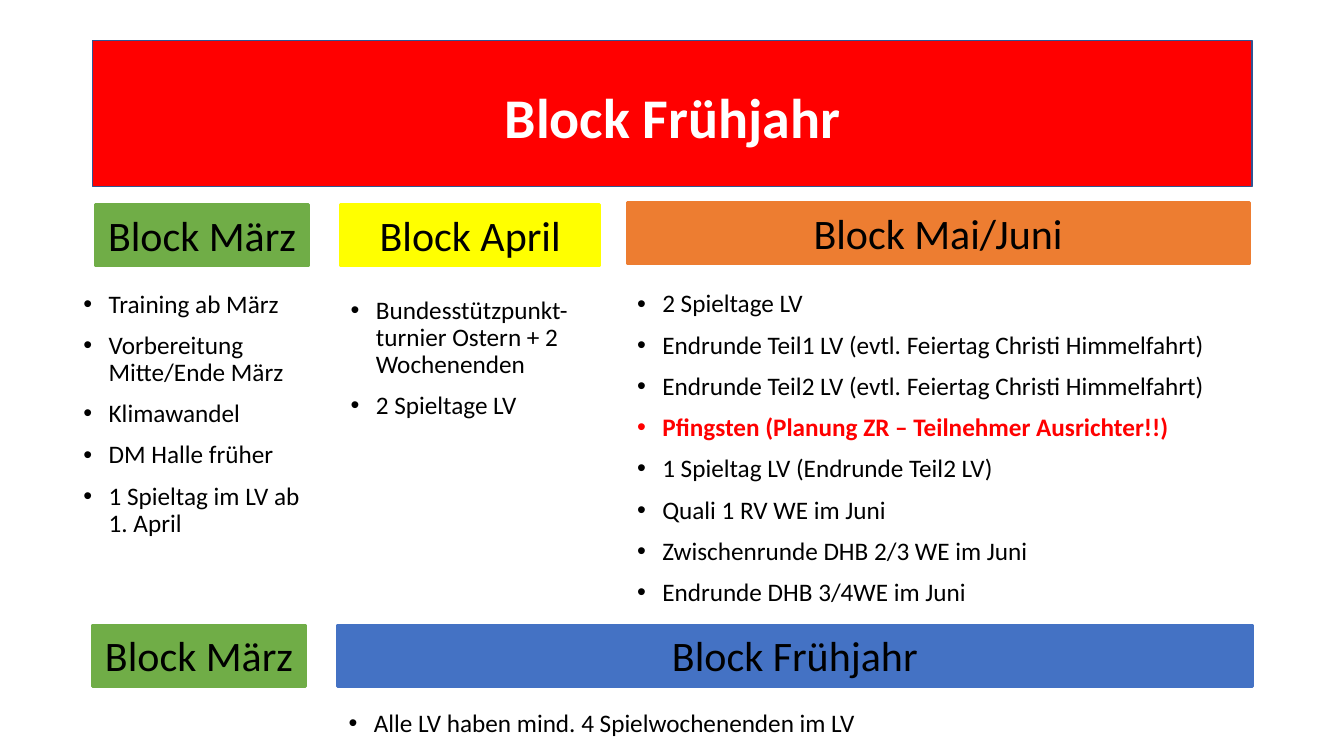
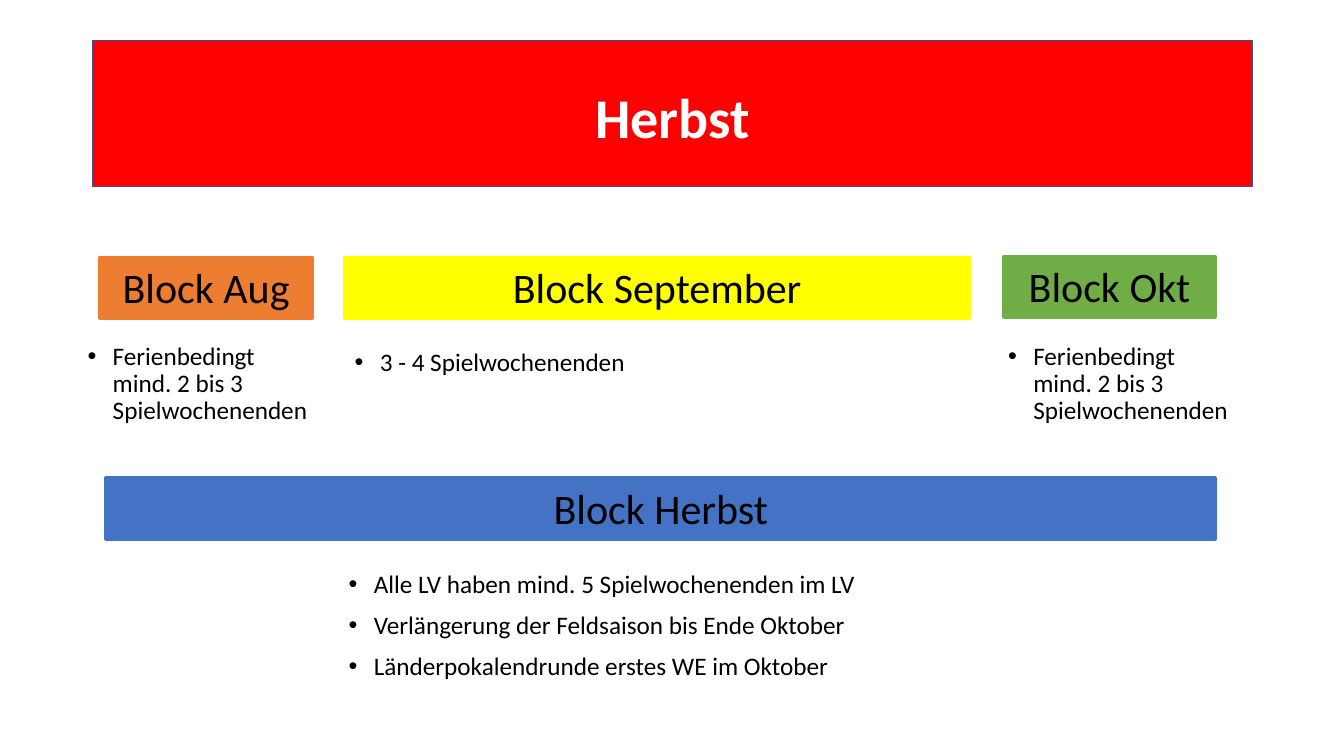
from lxml.etree import SubElement
from pptx import Presentation
from pptx.dml.color import RGBColor
from pptx.enum.shapes import MSO_SHAPE
from pptx.enum.text import MSO_ANCHOR, MSO_AUTO_SIZE, PP_ALIGN
from pptx.oxml.ns import qn
from pptx.util import Inches, Pt

HUES = {
    "red": "FF0000", "navy": "325491", "white": "FFFFFF", "black": "000000",
    "green": "70AD47", "yellow": "FFFF00", "orange": "ED7D31", "blue": "4472C4",
}
FONT = "Calibri"
TITLE = (0.92, 0.4, 11.5, 1.45)
BAR = 0.61
SLIM = 2.11
HOT = "Pfingsten (Planung ZR – Teilnehmer Ausrichter!!)"
BREAK = ["Ferienbedingt mind. 2 bis 3 Spielwochenenden"]

SLIDES = [
    {
        "title": "Block Frühjahr",
        "bars": [
            ("Block März", "green", 0.95, 2.03, SLIM),
            ("Block April", "yellow", 3.38, 2.03, 2.57),
            ("Block Mai/Juni", "orange", 6.22, 2.01, 6.17),
            ("Block März", "green", 0.92, 6.2, SLIM),
            ("Block Frühjahr", "blue", 3.35, 6.2, 9.07),
        ],
        "lists": [
            ((0.73, 2.84, 2.44, 2.65), [
                "Training ab März",
                "Vorbereitung Mitte/Ende März",
                "Klimawandel",
                "DM Halle früher",
                "1 Spieltag im LV ab 1. April",
            ]),
            ((3.38, 2.9, 2.57, 1.66), [
                "Bundesstützpunkt-turnier Ostern + 2 Wochenenden",
                "2 Spieltage LV",
            ]),
            ((6.22, 2.84, 6.08, 3.24), [
                "2 Spieltage LV",
                "Endrunde Teil1 LV (evtl. Feiertag Christi Himmelfahrt)",
                "Endrunde Teil2 LV (evtl. Feiertag Christi Himmelfahrt)",
                HOT,
                "1 Spieltag LV (Endrunde Teil2 LV)",
                "Quali 1 RV WE im Juni",
                "Zwischenrunde DHB 2/3 WE im Juni",
                "Endrunde DHB 3/4WE im Juni",
            ]),
            ((3.36, 7, 6.26, 0.42), [
                "Alle LV haben mind. 4 Spielwochenenden im LV",
            ]),
        ],
    },
    {
        "title": "Herbst",
        "bars": [
            ("Block Aug", "orange", 0.99, 2.55, SLIM),
            ("Block September", "yellow", 3.42, 2.55, 6.2),
            ("Block Okt", "green", 9.95, 2.54, SLIM),
            ("Block Herbst", "blue", 1.05, 4.74, 11.01),
        ],
        "lists": [
            ((0.77, 3.36, 2.44, 1.1), BREAK),
            ((3.42, 3.42, 6.26, 0.88), ["3 - 4 Spielwochenenden"]),
            ((9.9, 3.36, 2.44, 1.1), BREAK),
            ((3.36, 5.62, 6.26, 1.25), [
                "Alle LV haben mind. 5 Spielwochenenden im LV",
                "Verlängerung der Feldsaison bis Ende Oktober",
                "Länderpokalendrunde erstes WE im Oktober",
            ]),
        ],
    },
]


def color(name):
    return RGBColor.from_string(HUES[name])


def add_run(para, text, size, hue="black", bold=False):
    run = para.add_run()
    run.text = text
    font = run.font
    font.name, font.size, font.bold = FONT, Pt(size), bold
    font.color.rgb = color(hue)


def add_box(slide, box, fill, line, width):
    shape = slide.shapes.add_shape(MSO_SHAPE.RECTANGLE, *map(Inches, box))
    shape.shadow.inherit = False
    shape.fill.solid()
    shape.fill.fore_color.rgb = color(fill)
    shape.line.color.rgb = color(line)
    shape.line.width = Pt(width)
    frame = shape.text_frame
    frame.word_wrap = True
    para = frame.paragraphs[0]
    para.alignment = PP_ALIGN.CENTER
    return frame, para


def add_title(slide, text):
    frame, para = add_box(slide, TITLE, "red", "navy", 1)
    frame.vertical_anchor = MSO_ANCHOR.MIDDLE
    para.line_spacing = 1.07
    para.space_after = Pt(8)
    add_run(para, text, 40, "white", True)


def add_bar(slide, text, hue, left, top, width):
    frame, para = add_box(slide, (left, top, width, BAR), hue, hue, 2)
    frame.vertical_anchor = MSO_ANCHOR.TOP
    frame.auto_size = MSO_AUTO_SIZE.SHAPE_TO_FIT_TEXT
    add_run(para, text, 30)


def add_bullet(para, hue):
    props = para._p.get_or_add_pPr()
    props.set("marL", str(Inches(0.25)))
    props.set("indent", str(-Inches(0.25)))
    tint = SubElement(props, qn("a:buClr"))
    SubElement(tint, qn("a:srgbClr"), val=HUES[hue])
    SubElement(props, qn("a:buFont"), typeface="Arial")
    SubElement(props, qn("a:buChar"), char="•")


def add_list(slide, box, items):
    frame = slide.shapes.add_textbox(*map(Inches, box)).text_frame
    frame.word_wrap = True
    for i, item in enumerate(items):
        para = frame.add_paragraph() if i else frame.paragraphs[0]
        para.line_spacing = 0.9
        para.space_before = Pt(10)
        hot = item == HOT
        hue = "red" if hot else "black"
        add_bullet(para, hue)
        add_run(para, item, 18, hue, hot)


def main():
    deck = Presentation()
    deck.slide_width, deck.slide_height = Inches(13.33), Inches(7.5)
    for data in SLIDES:
        slide = deck.slides.add_slide(deck.slide_layouts[6])
        add_title(slide, data["title"])
        for bar in data["bars"]:
            add_bar(slide, *bar)
        for box, items in data["lists"]:
            add_list(slide, box, items)
    deck.save("out.pptx")


if __name__ == "__main__":
    main()
